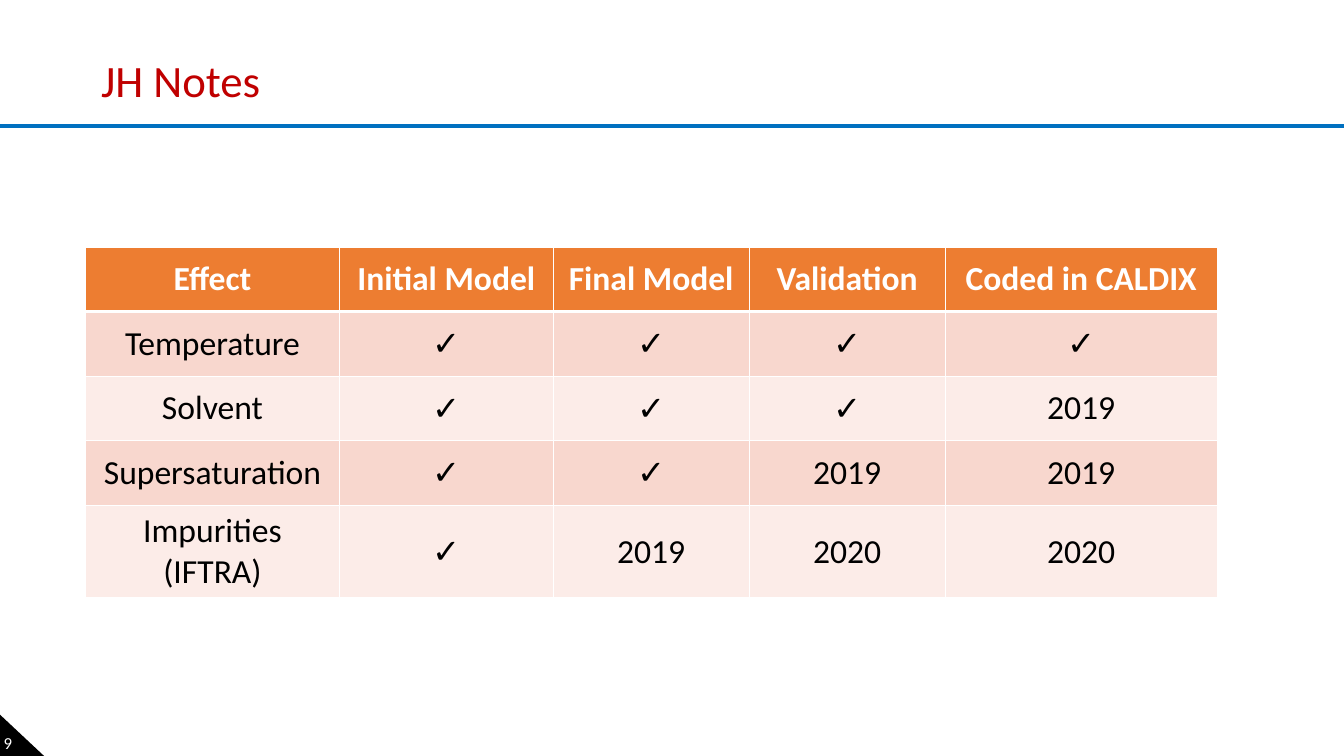
from dataclasses import dataclass

from lxml.etree import SubElement
from pptx import Presentation
from pptx.dml.color import RGBColor
from pptx.enum.shapes import MSO_CONNECTOR as Connector, MSO_SHAPE as Shape
from pptx.enum.text import MSO_ANCHOR as Anchor, PP_ALIGN as Align
from pptx.oxml.ns import qn
from pptx.util import Pt


@dataclass(frozen=True)
class Theme:
    font: str = "Calibri"
    symbol_font: str = "Arial"
    title: str = "C00000"
    rule: str = "0070C0"
    header: str = "ED7D31"
    bands: tuple = ("F8D7CE", "FCECE8")
    dark: str = "000000"
    light: str = "FFFFFF"
    title_size: int = 32
    table_size: int = 24
    number_size: int = 12


theme = Theme()


def style_text(para, size, color, font=theme.font, bold=False):
    for span in para.runs:
        span.font.size = Pt(size)
        span.font.name = font
        span.font.bold = bold
        span.font.color.rgb = RGBColor.from_string(color)


def add_border(cell, side, width):
    border = SubElement(cell._tc.get_or_add_tcPr(), qn(f"a:{side}"), w=str(Pt(width)))
    fill = SubElement(border, qn("a:solidFill"))
    SubElement(fill, qn("a:srgbClr"), val=theme.light)


deck = Presentation()
deck.slide_width, deck.slide_height = Pt(960), Pt(540)
page = deck.slides.add_slide(deck.slide_layouts[5])

# Rule under the title
rule = page.shapes.add_connector(Connector.STRAIGHT, Pt(0), Pt(90), Pt(960), Pt(90))
rule.line.color.rgb = RGBColor.from_string(theme.rule)
rule.line.width = Pt(3)
SubElement(rule._element.spPr, qn("a:effectLst"))

# Page number in the corner
corner = page.shapes.add_shape(Shape.RIGHT_TRIANGLE, Pt(0), Pt(510.5), Pt(31.5), Pt(29.5))
corner.shadow.inherit = False
corner.fill.solid()
corner.fill.fore_color.rgb = RGBColor.from_string(theme.dark)
corner.line.fill.background()
frame = corner.text_frame
frame.margin_left = frame.margin_right = frame.margin_top = frame.margin_bottom = 0
frame.vertical_anchor = Anchor.BOTTOM
frame.text = "9"
frame.paragraphs[0].alignment = Align.LEFT
style_text(frame.paragraphs[0], theme.number_size, theme.light)

# Title
title = page.shapes.title
title.left, title.top, title.width, title.height = Pt(65), Pt(6.5), Pt(828), Pt(73.5)
title.text_frame.text = "JH Notes"
title.text_frame.vertical_anchor = Anchor.BOTTOM
para = title.text_frame.paragraphs[0]
para.alignment = Align.LEFT
para.line_spacing = 0.9
style_text(para, theme.title_size, theme.title)

# Table of modelled effects
rows = [
    ("Effect", "Initial Model", "Final Model", "Validation", "Coded in CALDIX"),
    ("Temperature", "✓", "✓", "✓", "✓"),
    ("Solvent", "✓", "✓", "✓", "2019"),
    ("Supersaturation", "✓", "✓", "2019", "2019"),
    ("Impurities (IFTRA)", "✓", "2019", "2020", "2020"),
]
widths = [181.2, 152.8, 140, 140, 194.4]
row_height = 46.2
table = page.shapes.add_table(
    len(rows), len(widths), Pt(61.2), Pt(176.4), Pt(sum(widths)), Pt(row_height * len(rows))
).table
for column, width in zip(table.columns, widths):
    column.width = Pt(width)

for r, values in enumerate(rows):
    table.rows[r].height = Pt(row_height)
    header = r == 0
    fill = theme.header if header else theme.bands[(r - 1) % 2]
    color = theme.light if header else theme.dark
    for c, value in enumerate(values):
        cell = table.cell(r, c)
        for side in ("lnL", "lnR", "lnT", "lnB"):
            thick = (header and side == "lnB") or (r == 1 and side == "lnT")
            add_border(cell, side, 3 if thick else 1)
        cell.fill.solid()
        cell.fill.fore_color.rgb = RGBColor.from_string(fill)
        cell.vertical_anchor = Anchor.MIDDLE
        cell.text_frame.text = value
        para = cell.text_frame.paragraphs[0]
        para.alignment = Align.CENTER
        font = theme.symbol_font if value == "✓" else theme.font
        style_text(para, theme.table_size, color, font, header)

deck.save("out.pptx")
